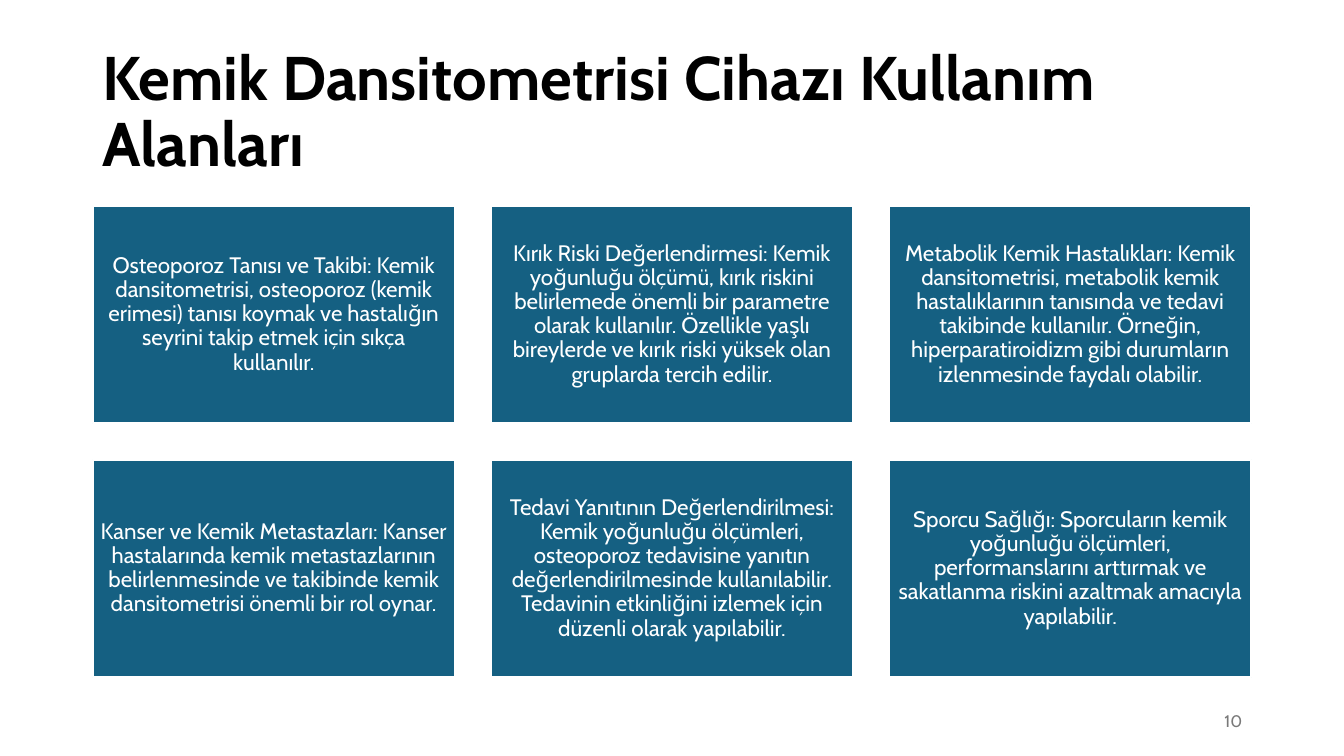
from dataclasses import dataclass

from pptx import Presentation
from pptx.dml.color import RGBColor
from pptx.enum.shapes import MSO_SHAPE
from pptx.enum.text import MSO_ANCHOR, PP_ALIGN
from pptx.util import Inches, Pt

RECTANGLE = MSO_SHAPE.RECTANGLE
MIDDLE = MSO_ANCHOR.MIDDLE
LEFT, CENTER, RIGHT = PP_ALIGN.LEFT, PP_ALIGN.CENTER, PP_ALIGN.RIGHT


@dataclass(frozen=True)
class Theme:
    """Colours, font and type sizes of the slide."""
    font: str = "Cabin"
    ink: str = "000000"
    paper: str = "FFFFFF"
    card: str = "156082"
    muted: str = "797979"
    title_size: int = 44
    card_size: int = 16
    number_size: int = 12
    border: float = 1.5


THEME = Theme()
TITLE = "Kemik Dansitometrisi Cihazı Kullanım Alanları"
USES = [
    "Osteoporoz Tanısı ve Takibi: Kemik dansitometrisi, osteoporoz (kemik erimesi) "
    "tanısı koymak ve hastalığın seyrini takip etmek için sıkça kullanılır.",
    "Kırık Riski Değerlendirmesi: Kemik yoğunluğu ölçümü, kırık riskini belirlemede "
    "önemli bir parametre olarak kullanılır. Özellikle yaşlı bireylerde ve kırık riski "
    "yüksek olan gruplarda tercih edilir.",
    "Metabolik Kemik Hastalıkları: Kemik dansitometrisi, metabolik kemik "
    "hastalıklarının tanısında ve tedavi takibinde kullanılır. Örneğin, "
    "hiperparatiroidizm gibi durumların izlenmesinde faydalı olabilir.",
    "Kanser ve Kemik Metastazları: Kanser hastalarında kemik metastazlarının "
    "belirlenmesinde ve takibinde kemik dansitometrisi önemli bir rol oynar.",
    "Tedavi Yanıtının Değerlendirilmesi: Kemik yoğunluğu ölçümleri, osteoporoz "
    "tedavisine yanıtın değerlendirilmesinde kullanılabilir. Tedavinin etkinliğini "
    "izlemek için düzenli olarak yapılabilir.",
    "Sporcu Sağlığı: Sporcuların kemik yoğunluğu ölçümleri, performanslarını arttırmak "
    "ve sakatlanma riskini azaltmak amacıyla yapılabilir.",
]


def write_text(shape, text, *, size, color, align=LEFT, bold=False, spacing=1.0, inset=None):
    """Fill a shape with one formatted, vertically centred paragraph."""
    frame = shape.text_frame
    frame.word_wrap = True
    frame.vertical_anchor = MIDDLE
    if inset is not None:
        frame.margin_left = frame.margin_right = Inches(inset)
        frame.margin_top = frame.margin_bottom = Inches(inset)
    paragraph = frame.paragraphs[0]
    paragraph.alignment = align
    paragraph.line_spacing = spacing
    run = paragraph.add_run()
    run.text = text
    run.font.name = THEME.font
    run.font.size = Pt(size)
    run.font.bold = bold
    run.font.color.rgb = RGBColor.from_string(color)


def add_label(slide, box, text, **text_format):
    """Place a text box in the given box."""
    shape = slide.shapes.add_textbox(*map(Inches, box))
    write_text(shape, text, **text_format)


def add_card(slide, box, text):
    """Place one filled card with centred text."""
    shape = slide.shapes.add_shape(RECTANGLE, *map(Inches, box))
    shape.shadow.inherit = False
    shape.fill.solid()
    shape.fill.fore_color.rgb = RGBColor.from_string(THEME.card)
    shape.line.color.rgb = RGBColor.from_string(THEME.paper)
    shape.line.width = Pt(THEME.border)
    write_text(shape, text, size=THEME.card_size, color=THEME.paper,
               align=CENTER, spacing=0.9, inset=0.07)


def add_card_grid(slide, box, texts, columns=3, gap=0.36):
    """Divide the box into equal cards, row by row."""
    left, top, width, height = box
    rows = -(-len(texts) // columns)
    card_width = (width - gap * (columns - 1)) / columns
    card_height = (height - gap * (rows - 1)) / rows
    for index, text in enumerate(texts):
        row, column = divmod(index, columns)
        card = (left + column * (card_width + gap), top + row * (card_height + gap),
                card_width, card_height)
        add_card(slide, card, text)


def main():
    """Build and save the slide."""
    presentation = Presentation()
    presentation.slide_width = Inches(13.33)
    presentation.slide_height = Inches(7.5)
    slide = presentation.slides.add_slide(presentation.slide_layouts[6])
    add_label(slide, (0.92, 0.4, 11.5, 1.45), TITLE, size=THEME.title_size,
              color=THEME.ink, bold=True, spacing=0.9)
    add_card_grid(slide, (0.92, 2.04, 11.49, 4.68), USES)
    add_label(slide, (9.42, 6.95, 3, 0.4), "10", size=THEME.number_size,
              color=THEME.muted, align=RIGHT)
    presentation.save("out.pptx")


if __name__ == "__main__":
    main()
